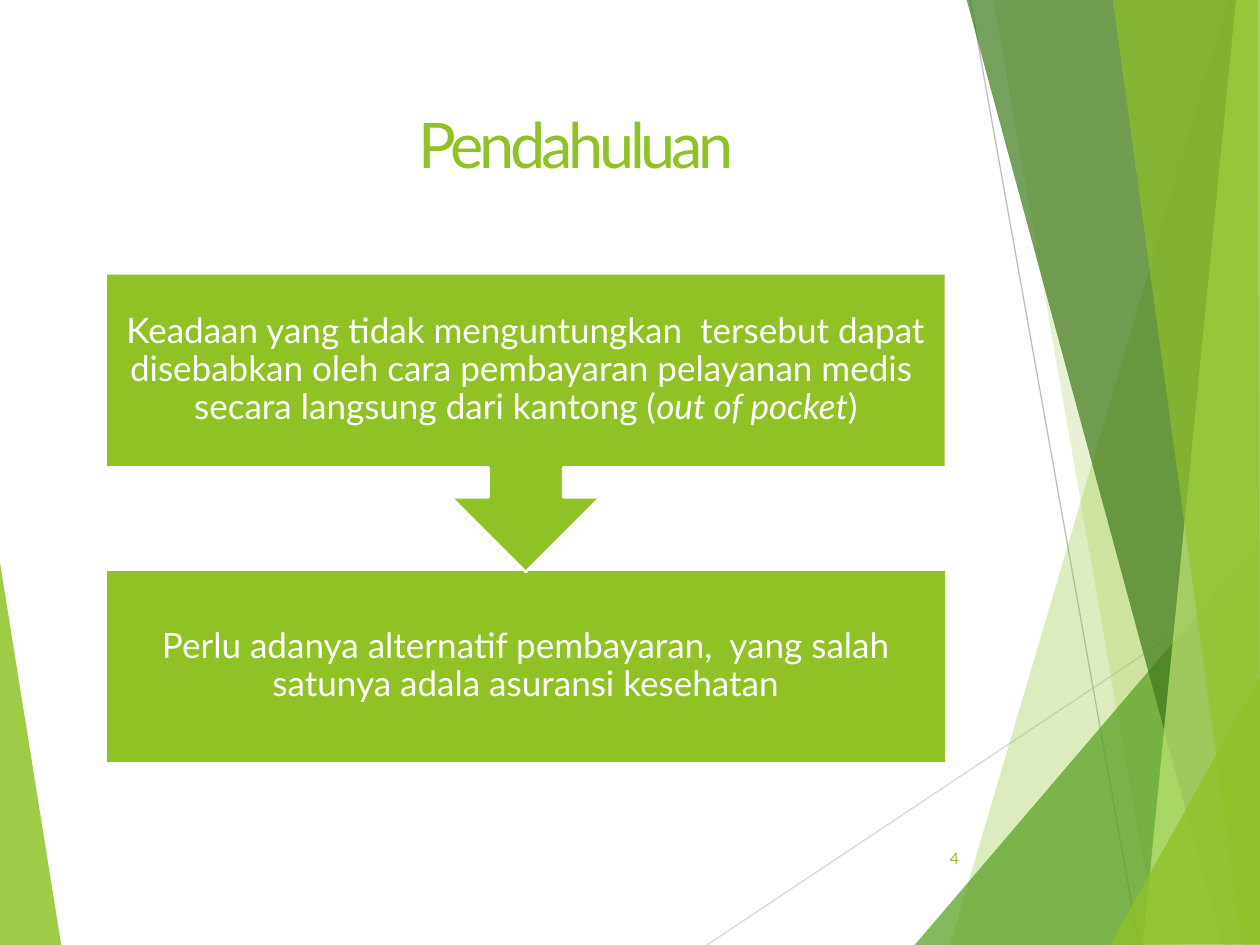
from collections import namedtuple

from lxml.etree import SubElement
from pptx import Presentation
from pptx.dml.color import RGBColor
from pptx.enum.shapes import MSO_CONNECTOR, MSO_SHAPE
from pptx.enum.text import MSO_ANCHOR as Anchor, MSO_AUTO_SIZE as AutoSize, PP_ALIGN as Align
from pptx.oxml.ns import qn
from pptx.util import Cm, Pt

Box = namedtuple("Box", "left top width height")

LIME = RGBColor(0x90, 0xC2, 0x26)
GREEN = RGBColor(0x54, 0xA0, 0x21)
FOREST = RGBColor(0x3F, 0x78, 0x19)
PALE = RGBColor(0xC0, 0xE4, 0x74)
WHITE = RGBColor(0xFF, 0xFF, 0xFF)
LIGHT_GREY = RGBColor(0xD9, 0xD9, 0xD9)
GREY = RGBColor(0xBF, 0xBF, 0xBF)
FONT = "Lato"

LEFT_FACET = [(-0.03, 11.15), (1.24, 19.08), (-0.03, 19.05)]
RIGHT_FACETS = [
    ([(24.77, 0), (19.15, 19.05), (25.45, 19.08), (25.43, 0.03)], LIME, 30),
    ([(20.02, -0.03), (23.34, 19.05), (25.43, 19.05), (25.43, -0.03)], LIME, 20),
    ([(18.44, 19.05), (25.4, 10.9), (25.43, 19.05)], GREEN, 72),
    ([(19.48, -0.03), (24.64, 19.05), (25.43, 19.02), (25.43, -0.03)], FOREST, 70),
    ([(24.92, -0.03), (23.04, 19.05), (25.43, 19.05), (25.4, -0.03)], PALE, 70),
    ([(22.43, -0.03), (25.04, 19.05), (25.4, 19.05), (25.35, -0.03)], LIME, 65),
    ([(22.38, 19.05), (25.43, 13.59), (25.43, 19.02)], LIME, 80),
]
RAYS = [
    ((14.25, 19.05), (25.43, 11.61), LIGHT_GREY),
    ((19.56, 0), (22.96, 19.05), GREY),
]


def add_facet(slide, box, points, color, opacity):
    corners = [(box.left + Cm(x), box.top + Cm(y)) for x, y in points]
    builder = slide.shapes.build_freeform(*corners[0])
    builder.add_line_segments(corners[1:], close=True)
    facet = builder.convert_to_shape()
    facet.shadow.inherit = False
    facet.fill.solid()
    facet.fill.fore_color.rgb = color
    facet.line.fill.background()
    fill_color = facet.fill._xPr.find(qn("a:solidFill"))[0]
    SubElement(fill_color, qn("a:alpha"), val=str(opacity * 1000))


def add_ray(slide, box, start, end, color):
    ray = slide.shapes.add_connector(
        MSO_CONNECTOR.STRAIGHT,
        box.left + Cm(start[0]), box.top + Cm(start[1]),
        box.left + Cm(end[0]), box.top + Cm(end[1]))
    ray.line.color.rgb = color
    ray.line.width = Pt(0.75)
    SubElement(ray._element.spPr, qn("a:effectLst"))


def add_facets(slide, box):
    add_facet(slide, box, LEFT_FACET, LIME, 85)
    for start, end, color in RAYS:
        add_ray(slide, box, start, end, color)
    for points, color, opacity in RIGHT_FACETS:
        add_facet(slide, box, points, color, opacity)


def format_frame(frame, anchor, inset=0):
    frame.word_wrap = True
    frame.vertical_anchor = anchor
    frame.margin_left = frame.margin_right = inset
    frame.margin_top = frame.margin_bottom = inset


def format_paragraph(paragraph, size, color, align):
    paragraph.alignment = align
    paragraph.font.name = FONT
    paragraph.font.size = Pt(size)
    paragraph.font.color.rgb = color


def place_title(slide, box):
    title = slide.shapes.title
    title.left, title.top, title.width, title.height = box
    format_frame(title.text_frame, Anchor.TOP)
    title.text_frame.auto_size = AutoSize.SHAPE_TO_FIT_TEXT
    heading = title.text_frame.paragraphs[0]
    format_paragraph(heading, 36, LIME, Align.LEFT)
    heading.space_before = Pt(1)
    run = heading.add_run()
    run.text = "Pendahuluan"
    run.font._element.set("spc", "-240")


def add_page_number(slide, box):
    frame = slide.shapes.add_textbox(*box).text_frame
    format_frame(frame, Anchor.MIDDLE)
    number = frame.paragraphs[0]
    number.text = "4"
    format_paragraph(number, 9, LIME, Align.RIGHT)


def add_step(slide, box, preset, text_height, parts, rotation=0):
    block = slide.shapes.add_shape(preset, *box)
    block.rotation = rotation
    block.shadow.inherit = False
    block.fill.solid()
    block.fill.fore_color.rgb = LIME
    block.line.color.rgb = WHITE
    block.line.width = Pt(1.5)

    frame = slide.shapes.add_textbox(box.left, box.top, box.width, text_height).text_frame
    format_frame(frame, Anchor.MIDDLE, Cm(0.4))
    statement = frame.paragraphs[0]
    format_paragraph(statement, 20, WHITE, Align.CENTER)
    statement.line_spacing = 0.9
    statement.space_after = Pt(7)
    for text, italic in parts:
        run = statement.add_run()
        run.text = text
        if italic:
            run.font.italic = True


def add_flow(slide, box):
    step_height = Cm(3.91)
    callout_height = Cm(6.02)
    add_step(
        slide,
        Box(box.left, box.top + box.height - step_height, box.width, step_height),
        MSO_SHAPE.RECTANGLE, step_height,
        [("Perlu adanya alternatif pembayaran,  yang salah satunya adala asuransi kesehatan", False)])
    add_step(
        slide, Box(box.left, box.top, box.width, callout_height),
        MSO_SHAPE.UP_ARROW_CALLOUT, step_height,
        [("Keadaan yang tidak menguntungkan  tersebut dapat disebabkan oleh cara "
          "pembayaran pelayanan medis  secara langsung dari kantong (", False),
         ("out of pocket", True),
         (")", False)],
        rotation=180)


def main():
    deck = Presentation()
    deck.slide_width, deck.slide_height = Cm(25.4), Cm(19.05)
    slide = deck.slides.add_slide(deck.slide_layouts[5])
    add_facets(slide, Box(0, 0, deck.slide_width, deck.slide_height))
    place_title(slide, Box(Cm(8.43), Cm(2.13), Cm(8.59), Cm(1.93)))
    add_page_number(slide, Box(Cm(17.91), Cm(16.79), Cm(1.42), Cm(1.02)))
    add_flow(slide, Box(Cm(2.13), Cm(5.51), Cm(16.94), Cm(9.88)))
    deck.save("out.pptx")


if __name__ == "__main__":
    main()
